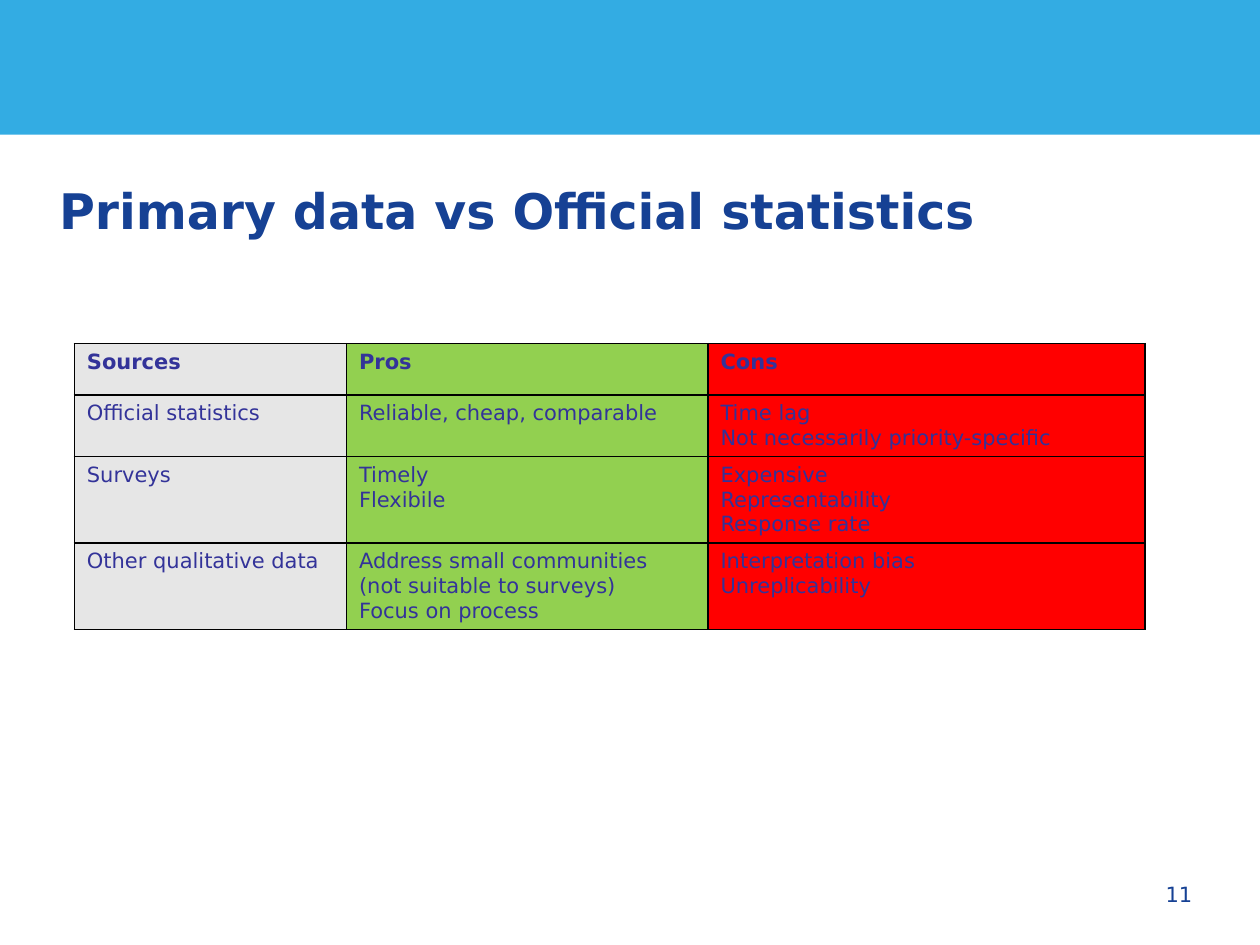
from lxml import etree
from pptx import Presentation
from pptx.dml.color import RGBColor
from pptx.enum import shapes, text
from pptx.oxml import ns
from pptx.util import Pt

FONT = "DejaVu Sans"
NAVY, INDIGO, SKY = "164194", "333399", "33ACE3"
COLUMN_FILLS = ["E6E6E6", "92D050", "FF0000"]
COLUMN_WIDTHS = [155.5, 206.6, 249.8]
ROW_HEIGHT = 29.2

# One row per source; each line of a cell is a paragraph
SOURCES = [
    ["Sources", "Pros", "Cons"],
    ["Official statistics", "Reliable, cheap, comparable",
     "Time lag\nNot necessarily priority-specific"],
    ["Surveys", "Timely\nFlexibile", "Expensive\nRepresentability\nResponse rate"],
    ["Other qualitative data",
     "Address small communities (not suitable to surveys)\nFocus on process",
     "Interpretation bias\nUnreplicability"],
]


def rgb(value):
    return RGBColor.from_string(value)


def write(frame, content, size=12, color=INDIGO, bold=False,
          align=text.PP_ALIGN.LEFT, spacing=None):
    frame.word_wrap = True
    frame.text = content
    for paragraph in frame.paragraphs:
        paragraph.alignment = align
        paragraph.line_spacing = spacing
        for run in paragraph.runs:
            run.font.name = FONT
            run.font.size = Pt(size)
            run.font.bold = bold
            run.font.color.rgb = rgb(color)


def set_insets(frame, side):
    frame.margin_left = frame.margin_right = Pt(side)
    frame.margin_top = frame.margin_bottom = Pt(0)


def add_band(slide, width, height):
    band = slide.shapes.add_shape(shapes.MSO_SHAPE.RECTANGLE, 0, 0, width, height)
    band.shadow.inherit = False
    band.fill.solid()
    band.fill.fore_color.rgb = rgb(SKY)
    band.line.fill.background()


def place_title(slide, content):
    title = slide.shapes.title
    title.left, title.top, title.width, title.height = Pt(33.8), Pt(100), Pt(646.6), Pt(51)
    frame = title.text_frame
    set_insets(frame, 0)
    frame.auto_size = text.MSO_AUTO_SIZE.NONE
    frame.vertical_anchor = text.MSO_ANCHOR.TOP
    write(frame, content, size=28, color=NAVY, bold=True, spacing=1.1)


def add_page_number(slide, number):
    frame = slide.shapes.add_textbox(Pt(520.6), Pt(496.8), Pt(167.8), Pt(28.8)).text_frame
    set_insets(frame, 7.2)
    frame.vertical_anchor = text.MSO_ANCHOR.MIDDLE
    write(frame, number, color=NAVY, align=text.PP_ALIGN.RIGHT)


def border_cell(cell, color="000000", width=1):
    properties = cell._tc.get_or_add_tcPr()
    for position, side in enumerate(("lnL", "lnR", "lnT", "lnB")):
        line = etree.Element(ns.qn(f"a:{side}"), w=str(Pt(width)))
        fill = etree.SubElement(line, ns.qn("a:solidFill"))
        etree.SubElement(fill, ns.qn("a:srgbClr"), val=color)
        properties.insert(position, line)


def add_comparison(slide, left, top):
    table = slide.shapes.add_table(
        len(SOURCES), len(COLUMN_WIDTHS), Pt(left), Pt(top),
        Pt(sum(COLUMN_WIDTHS)), Pt(ROW_HEIGHT * len(SOURCES))).table
    table.first_row = table.horz_banding = False
    for column, width in zip(table.columns, COLUMN_WIDTHS):
        column.width = Pt(width)
    for r, entries in enumerate(SOURCES):
        table.rows[r].height = Pt(ROW_HEIGHT)
        for c, entry in enumerate(entries):
            cell = table.cell(r, c)
            cell.fill.solid()
            cell.fill.fore_color.rgb = rgb(COLUMN_FILLS[c])
            border_cell(cell)
            write(cell.text_frame, entry, bold=r == 0)


def main():
    deck = Presentation()
    deck.slide_width, deck.slide_height = Pt(720), Pt(540)
    slide = deck.slides.add_slide(deck.slide_layouts[5])

    # Header band and title
    add_band(slide, deck.slide_width, Pt(77))
    place_title(slide, "Primary data vs Official statistics")

    # Pros and cons of each source
    add_comparison(slide, 42.5, 196.4)

    # Footer
    add_page_number(slide, "11")
    deck.save("out.pptx")


if __name__ == "__main__":
    main()
